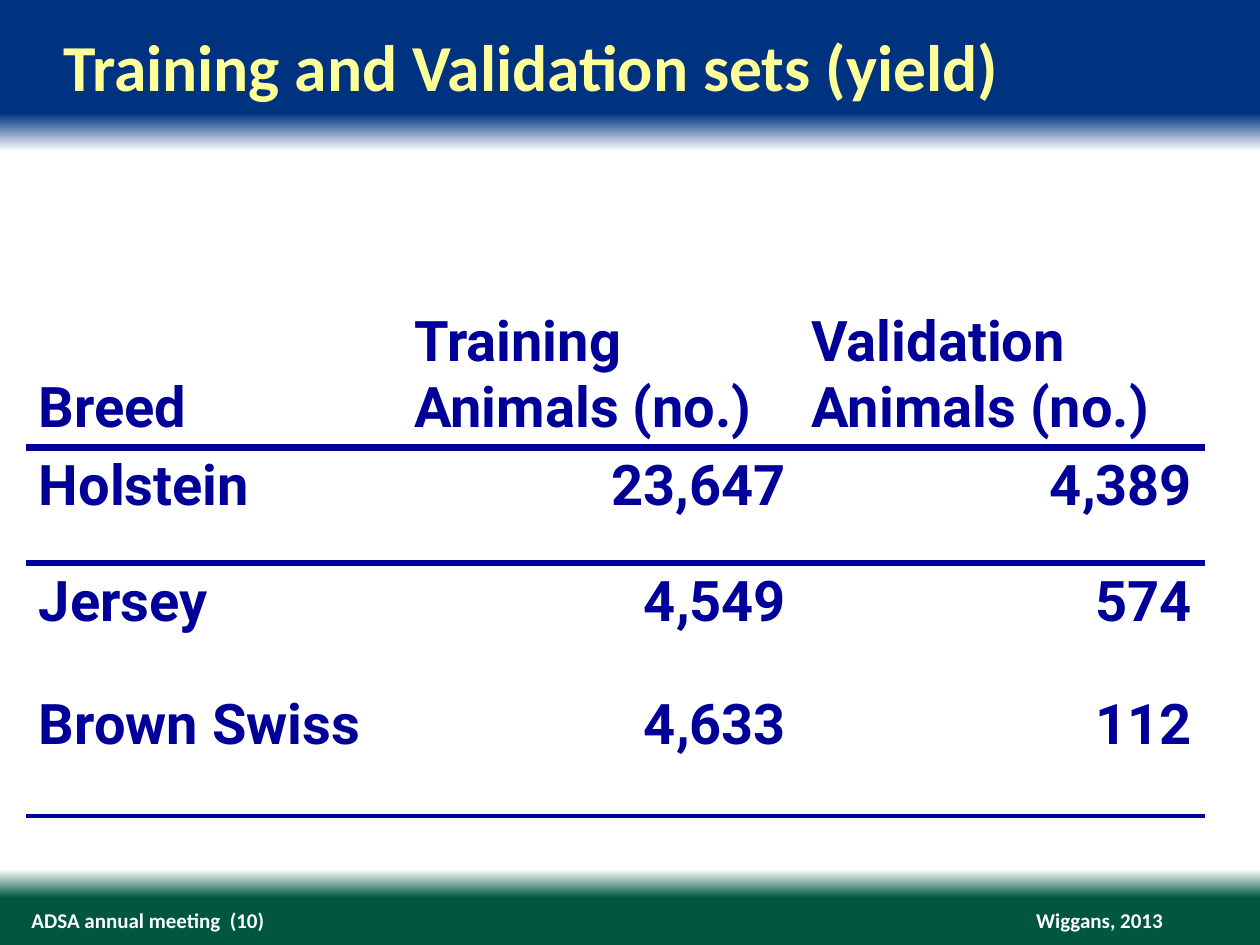
"""Build the training and validation sets slide."""
from dataclasses import dataclass
from typing import Optional

from lxml import etree
from pptx import Presentation
from pptx import util as u
from pptx.dml.color import RGBColor
from pptx.enum import text
from pptx.oxml import ns

BLUE = RGBColor(0x00, 0x33, 0x7F)
GREEN = RGBColor(0x00, 0x56, 0x3F)
WHITE = RGBColor(0xFF, 0xFF, 0xFF)
YELLOW = RGBColor(0xFF, 0xFF, 0x99)
NAVY = RGBColor(0x00, 0x00, 0x99)
STOPS = [(0, BLUE), (12, BLUE), (16, WHITE), (92, WHITE), (95, GREEN), (100, GREEN)]
COL_WIDTHS = (214.5, 227, 232)
NO_GRID = "{2D5ABB26-0587-4C30-8999-92F81FD0307C}"
LEFT, RIGHT = text.PP_ALIGN.LEFT, text.PP_ALIGN.RIGHT
TOP, MIDDLE, BOTTOM = (text.MSO_ANCHOR.TOP, text.MSO_ANCHOR.MIDDLE,
                       text.MSO_ANCHOR.BOTTOM)


@dataclass
class Row:
    cells: tuple
    height: float
    rule: Optional[float] = None
    anchor: text.MSO_ANCHOR = TOP
    number_align: text.PP_ALIGN = RIGHT


@dataclass
class Footer:
    words: str
    left: float
    width: float
    align: text.PP_ALIGN
    wrap: bool


ROWS = [
    Row(("Breed", "Training Animals (no.)", "Validation Animals (no.)"),
        108, 4.5, BOTTOM, LEFT),
    Row(("Holstein", "23,647", "4,389"), 66.25, 4.5),
    Row(("Jersey", "4,549", "574"), 70.5),
    Row(("Brown Swiss", "4,633", "112"), 74, 3),
]
FOOTERS = [
    Footer("Wiggans, 2013", 591, 73.5, RIGHT, False),
    Footer("ADSA annual meeting  (10)", 18, 376, LEFT, True),
]


def format_text(tf, words: str, size: float, font: str, color: RGBColor,
                align: text.PP_ALIGN) -> None:
    tf.text = words
    p = tf.paragraphs[0]
    p.alignment = align
    p.font.size = u.Pt(size)
    p.font.name = font
    p.font.bold = True
    p.font.color.rgb = color


def clear_margins(tf) -> None:
    tf.margin_left = tf.margin_right = tf.margin_top = tf.margin_bottom = 0


def paint_background(s) -> None:
    fill = s.background.fill
    fill.gradient()
    fill.gradient_angle = 270
    gs_lst = s.element.find(".//" + ns.qn("a:gsLst"))
    for gs in list(gs_lst):
        gs_lst.remove(gs)
    for percent, color in STOPS:
        gs = etree.SubElement(gs_lst, ns.qn("a:gs"), pos=str(percent * 1000))
        etree.SubElement(gs, ns.qn("a:srgbClr"), val=str(color))


def add_footer(s, footer: Footer) -> None:
    sp = s.shapes.add_textbox(u.Pt(footer.left), u.Pt(518.5),
                              u.Pt(footer.width), u.Pt(14.5))
    tf = sp.text_frame
    clear_margins(tf)
    tf.word_wrap = footer.wrap
    tf.vertical_anchor = MIDDLE
    format_text(tf, footer.words, 12, "Calibri", WHITE, footer.align)


def add_title(s, words: str) -> None:
    sp = s.shapes.title
    sp.left, sp.top, sp.width, sp.height = map(u.Pt, (36, 14.5, 648, 45.5))
    tf = sp.text_frame
    clear_margins(tf)
    tf.vertical_anchor = TOP
    tf.auto_size = text.MSO_AUTO_SIZE.SHAPE_TO_FIT_TEXT
    format_text(tf, words, 37.5, "Calibri", YELLOW, LEFT)


def rule_below(cell, width: float) -> None:
    line = etree.Element(ns.qn("a:lnB"), w=str(u.Pt(width)))
    fill = etree.SubElement(line, ns.qn("a:solidFill"))
    etree.SubElement(fill, ns.qn("a:srgbClr"), val=str(NAVY))
    cell._tc.get_or_add_tcPr().insert(0, line)


def add_breed_table(s) -> None:
    height = sum(row.height for row in ROWS)
    frame = s.shapes.add_table(len(ROWS), len(COL_WIDTHS), u.Pt(15), u.Pt(147.5),
                               u.Pt(sum(COL_WIDTHS)), u.Pt(height))
    table = frame.table
    table.first_row = table.horz_banding = False
    table._tbl.tblPr.find(ns.qn("a:tableStyleId")).text = NO_GRID
    for column, width in zip(table.columns, COL_WIDTHS):
        column.width = u.Pt(width)
    for i, row in enumerate(ROWS):
        table.rows[i].height = u.Pt(row.height)
        for j, words in enumerate(row.cells):
            cell = table.cell(i, j)
            cell.fill.background()
            cell.vertical_anchor = row.anchor
            format_text(cell.text_frame, words, 32, "Roboto", NAVY,
                        row.number_align if j else LEFT)
            if row.rule:
                rule_below(cell, row.rule)


def main() -> None:
    prs = Presentation()
    prs.slide_width, prs.slide_height = u.Pt(720), u.Pt(540)
    s = prs.slides.add_slide(prs.slide_layouts[5])
    paint_background(s)
    for footer in FOOTERS:
        add_footer(s, footer)
    add_title(s, "Training and Validation sets (yield)")
    add_breed_table(s)
    prs.save("out.pptx")


if __name__ == "__main__":
    main()
